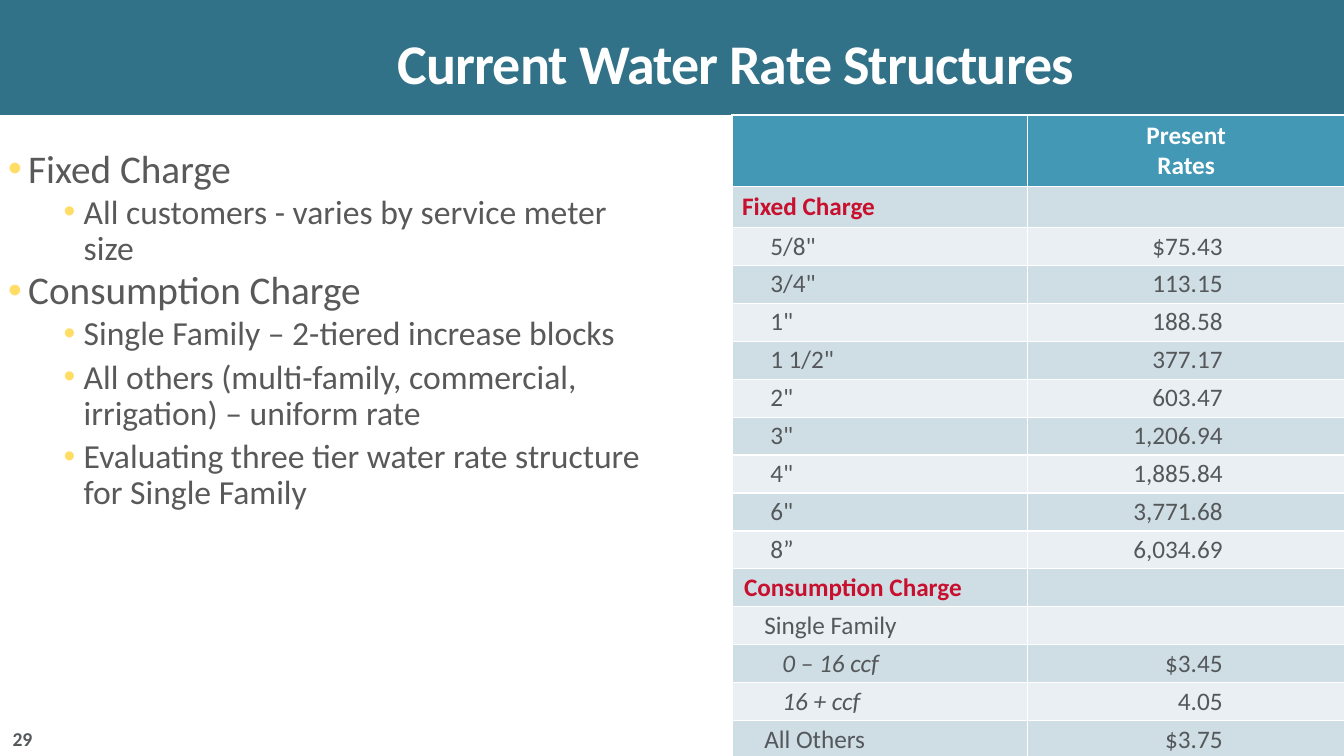
from lxml.etree import SubElement
from pptx import Presentation
from pptx.dml.color import RGBColor
from pptx.enum.shapes import MSO_SHAPE as Shape
from pptx.enum.text import MSO_ANCHOR as Anchor, MSO_AUTO_SIZE as AutoSize, PP_ALIGN as Align
from pptx.oxml.ns import qn
from pptx.util import Inches, Pt

WHITE, GRAY, RED, YELLOW = "FFFFFF", "54585A", "C8102E", "FFDD66"
BAND, HEADER, DARK_ROW, LIGHT_ROW = "327288", "4298B5", "CFDDE5", "E9EFF3"


def color(value):
    return RGBColor.from_string(value)


def style(span, size, shade, bold=False, italic=False):
    values = {"name": "Calibri", "size": Pt(size), "bold": bold, "italic": italic}
    for name, value in values.items():
        setattr(span.font, name, value)
    span.font.color.rgb = color(shade)


deck = Presentation()
deck.slide_width, deck.slide_height = Inches(13.33), Inches(7.5)
page = deck.slides.add_slide(deck.slide_layouts[1])
title, body = page.placeholders[0], page.placeholders[1]

band = page.shapes.add_shape(Shape.RECTANGLE, 0, 0, deck.slide_width, Inches(1.14))
band.shadow.inherit = False
band.fill.solid()
band.fill.fore_color.rgb = color(BAND)
band.line.fill.background()
page.shapes._spTree.insert(2, band._element)

number = page.shapes.add_textbox(0, 0, 0, 0)
places = [
    (title, 3.84, 0.17, 9.07, 0.97, Anchor.MIDDLE),
    (body, -0.02, 1.43, 6.6, 5.47, Anchor.TOP),
    (number, 0, 7.16, 0.42, 0.34, Anchor.TOP),
]
for box, left, top, width, height, anchor in places:
    for name, value in zip(("left", "top", "width", "height"), (left, top, width, height)):
        setattr(box, name, Inches(value))
    frame_format = {"word_wrap": True, "auto_size": AutoSize.NONE, "vertical_anchor": anchor}
    for name, value in frame_format.items():
        setattr(box.text_frame, name, value)

para = title.text_frame.paragraphs[0]
para.alignment, para.line_spacing = Align.LEFT, 0.9
span = para.add_run()
span.text = "Current Water Rate Structures"
style(span, 40, WHITE, bold=True)
span.font._element.set("spc", "-60")

para = number.text_frame.paragraphs[0]
para.alignment = Align.RIGHT
span = para.add_run()
span.text = "29"
style(span, 14, GRAY, bold=True)

points = [
    (0, "Fixed Charge"),
    (1, "All customers - varies by service meter size"),
    (0, "Consumption Charge"),
    (1, "Single Family – 2-tiered increase blocks"),
    (1, "All others (multi-family, commercial, irrigation) – uniform rate"),
    (1, "Evaluating three tier water rate structure for Single Family"),
]
levels = [(28, 0.2, 0), (24, 0.75, 2.5)]
body.text_frame.text = "\n".join(text for level, text in points)
for para, (level, text) in zip(body.text_frame.paragraphs, points):
    size, indent, gap = levels[level]
    para_format = {"level": level, "line_spacing": 0.9, "space_before": Pt(gap),
                   "space_after": Pt(gap), "alignment": Align.LEFT}
    for name, value in para_format.items():
        setattr(para, name, value)
    style(para.runs[0], size, "595959")
    props = para._p.get_or_add_pPr()
    props.set("marL", str(Inches(indent)))
    props.set("indent", str(Inches(-0.2)))
    SubElement(SubElement(props, qn("a:buClr")), qn("a:srgbClr"), val=YELLOW)
    SubElement(props, qn("a:buFont"), typeface="Arial")
    SubElement(props, qn("a:buChar"), char="•")

meters = [
    ('5/8"', "$75.43"), ('3/4"', "113.15"), ('1"', "188.58"),
    ('1 1/2"', "377.17"), ('2"', "603.47"), ('3"', "1,206.94"),
    ('4"', "1,885.84"), ('6"', "3,771.68"), ("8”", "6,034.69"),
]
rows = [
    ("", "Present\vRates", 0),
    ("Fixed Charge", "", 0),
    *[(meter, rate, 0.38) for meter, rate in meters],
    ("Consumption Charge", "", 0),
    ("Single Family", "", 0.32),
    ("0 – 16 ccf", "$3.45", 0.5),
    ("16 + ccf", "4.05", 0.5),
    ("All Others", "$3.75", 0.32),
]
table = page.shapes.add_table(len(rows), 2, Inches(7.26), Inches(1.14),
                              Inches(6.08), Inches(6.37)).table
table.columns[0].width, table.columns[1].width = Inches(2.93), Inches(3.15)
heights = [Inches(0.69), Inches(0.4)] + [Inches(5.27 / 14)] * 14

for index, (label, rate, offset) in enumerate(rows):
    table.rows[index].height = heights[index]
    for column, (text, tab, kind) in enumerate([(label, offset, "l"), (rate, 1.62, "dec")]):
        cell = table.cell(index, column)
        if index > 1:
            for side in ("left", "right", "top", "bottom"):
                setattr(cell, "margin_" + side, 0)
        cell.vertical_anchor = Anchor.TOP if index == 1 else Anchor.MIDDLE
        for edge in ("a:lnL", "a:lnR", "a:lnT", "a:lnB"):
            line = SubElement(cell._tc.get_or_add_tcPr(), qn(edge), w=str(Pt(1)))
            SubElement(SubElement(line, qn("a:solidFill")), qn("a:srgbClr"), val=WHITE)
        cell.fill.solid()
        cell.fill.fore_color.rgb = color(
            HEADER if index == 0 else DARK_ROW if index % 2 else LIGHT_ROW)
        if not text:
            continue
        heading = offset == 0
        para = cell.text_frame.paragraphs[0]
        para.text = text if heading else "\t" + text
        for span in para.runs:
            shade = WHITE if index == 0 else RED if heading else GRAY
            style(span, 18, shade, bold=heading, italic=column == 0 and offset == 0.5)
        props = para._p.get_or_add_pPr()
        if index == 0:
            para.alignment = Align.CENTER
        elif not heading:
            SubElement(SubElement(props, qn("a:tabLst")), qn("a:tab"),
                       pos=str(Inches(tab)), algn=kind)
        elif index > 1:
            props.set("marL", str(Inches(0.12)))

deck.save("out.pptx")
